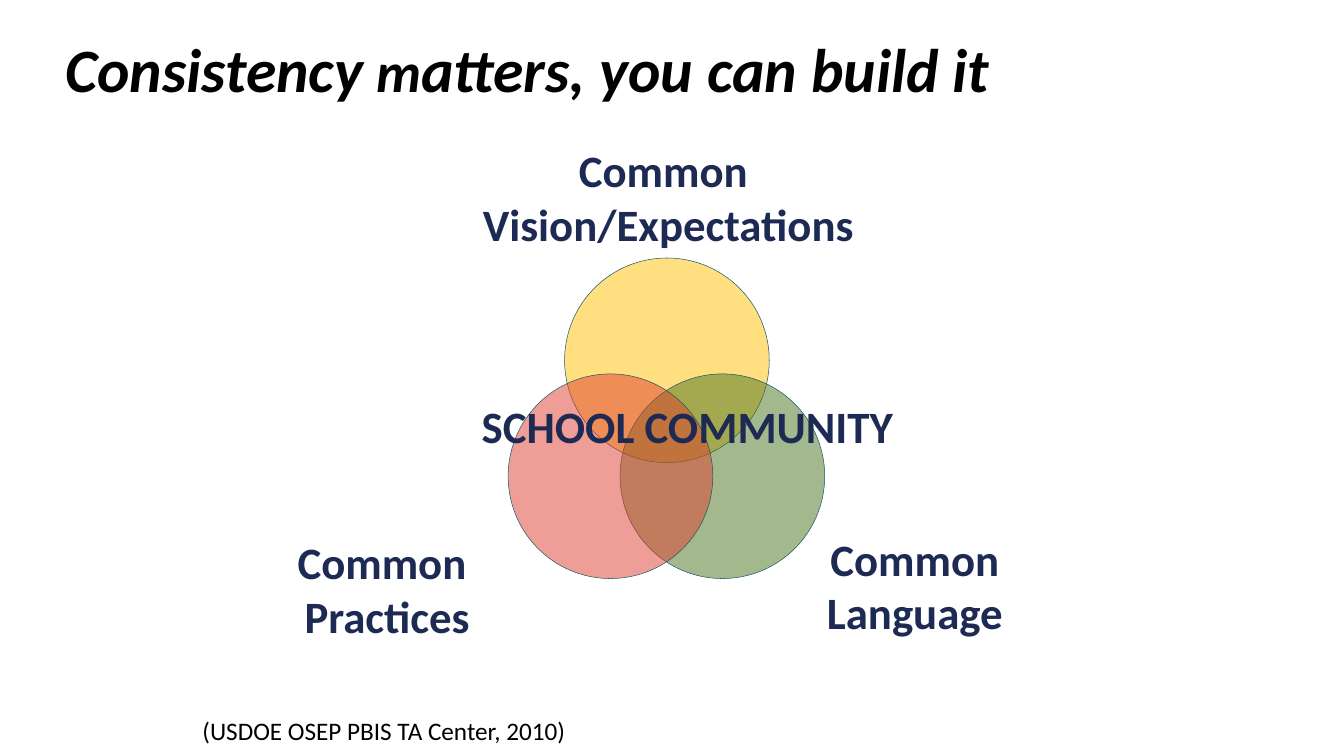
"""Build the slide on consistency with a three-circle Venn diagram."""
import lxml.etree
import pptx
import pptx.dml.color
import pptx.enum.shapes
import pptx.enum.text
import pptx.oxml.ns
import pptx.util

Inches = pptx.util.Inches
RGBColor = pptx.dml.color.RGBColor
Align = pptx.enum.text.PP_ALIGN
Anchor = pptx.enum.text.MSO_ANCHOR

BLACK = RGBColor(0x00, 0x00, 0x00)
NAVY = RGBColor(0x1D, 0x2A, 0x53)
TEAL = RGBColor(0x19, 0x58, 0x69)
YELLOW = RGBColor(0xFF, 0xC0, 0x00)
GREEN = RGBColor(0x4B, 0x73, 0x1F)
RED = RGBColor(0xDE, 0x3F, 0x2E)
DIAMETER = 2.03


def format_run(run, size, color, bold=False, italic=False):
    run.font.name = "Calibri"
    run.font.size = pptx.util.Pt(size)
    run.font.color.rgb = color
    run.font.bold = bold
    run.font.italic = italic


def add_text(slide, text, box, size, color, bold, alignment):
    shape = slide.shapes.add_textbox(*[Inches(length) for length in box])
    frame = shape.text_frame
    frame.text = text
    frame.word_wrap = True
    for paragraph in frame.paragraphs:
        paragraph.alignment = alignment
        format_run(paragraph.runs[0], size, color, bold)
    return frame


presentation = pptx.Presentation()
presentation.slide_width = Inches(13.33)
presentation.slide_height = Inches(7.5)
slide = presentation.slides.add_slide(presentation.slide_layouts[5])

title = slide.shapes.title
title.left, title.top = Inches(0.55), Inches(0.32)
title.width, title.height = Inches(9.94), Inches(0.79)
title.text_frame.auto_size = pptx.enum.text.MSO_AUTO_SIZE.NONE
title.text_frame.vertical_anchor = Anchor.MIDDLE
heading = title.text_frame.paragraphs[0]
heading.alignment = Align.LEFT
heading.line_spacing = 0.9
for text, size in [("Consistency", 44), (" m", 40), ("atters, you can build it", 44)]:
    run = heading.add_run()
    run.text = text
    format_run(run, size, BLACK, bold=True, italic=True)

venn_parts = [
    (YELLOW, 5.6, 2.56, "Common \nVision/Expectations", (4.7, 1.41, 3.86, 1.08)),
    (GREEN, 6.15, 3.71, "Common \nLanguage ", (7.24, 4.97, 3.77, 1.67)),
    (RED, 5.04, 3.71, "Common \nPractices", (2.84, 5.3, 2, 1.08)),
]
for color, left, top, label, label_box in venn_parts:
    circle = slide.shapes.add_shape(
        pptx.enum.shapes.MSO_SHAPE.OVAL,
        Inches(left), Inches(top), Inches(DIAMETER), Inches(DIAMETER))
    circle.shadow.inherit = False
    circle.fill.solid()
    circle.fill.fore_color.rgb = color
    fill_color = circle.fill._xPr.find(".//" + pptx.oxml.ns.qn("a:srgbClr"))
    lxml.etree.SubElement(fill_color, pptx.oxml.ns.qn("a:alpha"), val="50000")
    circle.line.color.rgb = TEAL
    circle.line.width = pptx.util.Pt(0.37)

    frame = add_text(slide, label, label_box, 32, NAVY, True, Align.CENTER)
    frame.word_wrap = False
    frame.vertical_anchor = Anchor.MIDDLE
    frame.margin_left = frame.margin_right = 0
    frame.margin_top = frame.margin_bottom = 0

add_text(slide, "SCHOOL COMMUNITY", (4.68, 3.91, 5.5, 0.64), 32, NAVY, True, Align.LEFT)
add_text(slide, "(USDOE OSEP PBIS TA Center, 2010)", (1.91, 7.05, 5.14, 0.4),
         18, BLACK, False, Align.LEFT)

presentation.save("out.pptx")
